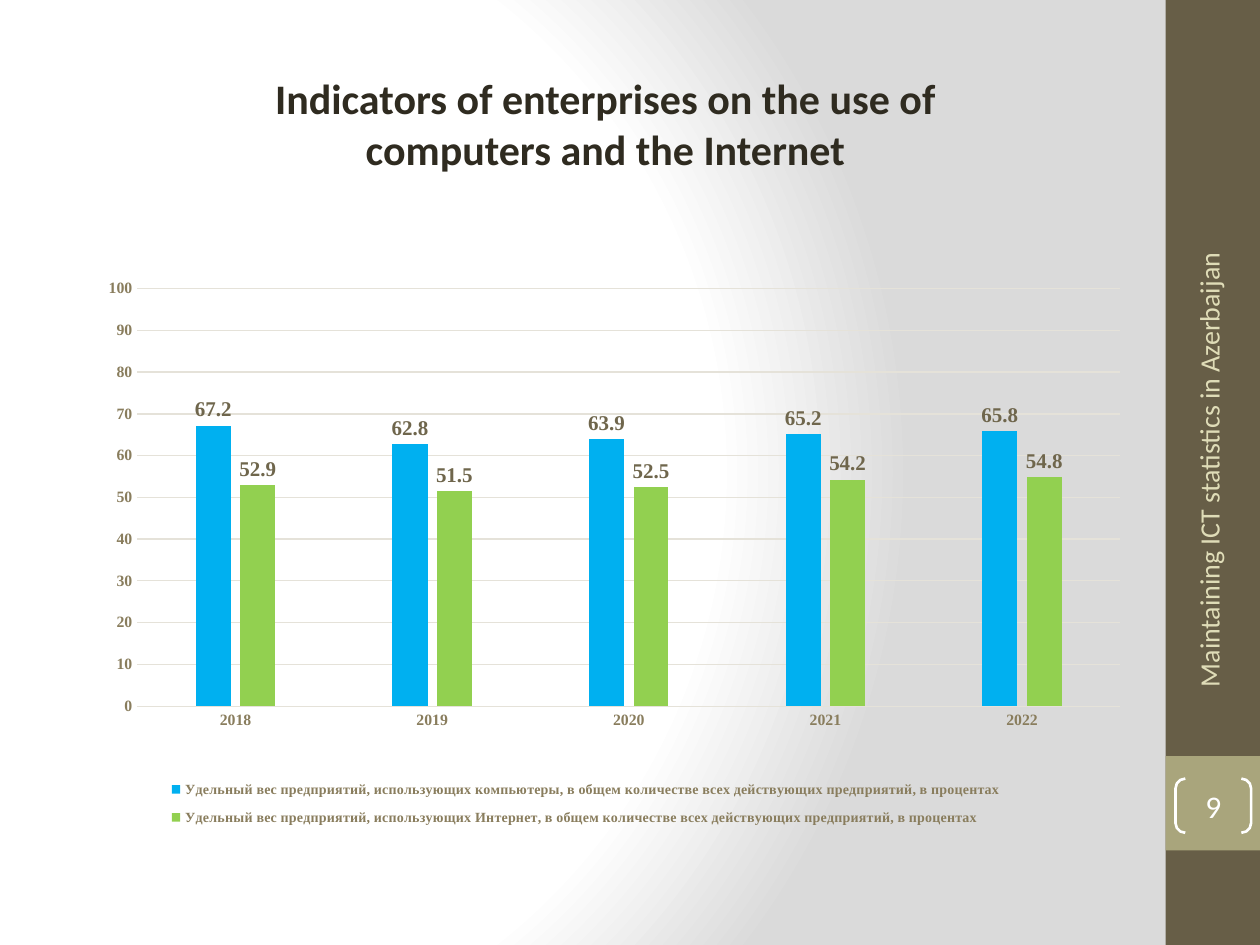
from dataclasses import dataclass

from pptx import Presentation, util as u
from pptx.chart import data as chart_data
from pptx.dml.color import RGBColor
from pptx.enum import chart as charts, shapes, text
from pptx.oxml import ns, parse_xml

SCALE = 9144
COLORS = {
    "white": "FFFFFF", "shade": "DADADA", "bar": "675E47", "badge": "A9A57C",
    "side": "DFDCB7", "dark": "2F2B20", "axis": "897D5D", "grid": "E5E2D9",
    "label": "6F664C", "computers": "00B0F0", "internet": "92D050",
}
STOPS = ((0, "white"), (75, "white"), (100, "shade"))
YEARS = ["2018", "2019", "2020", "2021", "2022"]
SHARE = "Удельный вес предприятий, использующих {}, в общем количестве всех действующих предприятий, в процентах"
SERIES = [
    ("computers", SHARE.format("компьютеры"), (67.2, 62.8, 63.9, 65.2, 65.8)),
    ("internet", SHARE.format("Интернет"), (52.9, 51.5, 52.5, 54.2, 54.8)),
]


def color(name):
    return RGBColor.from_string(COLORS[name])


def px(*lengths):
    return [u.Emu(length * SCALE) for length in lengths]


def place(parent, x, y, w, h, inner=False):
    target = '<c:layoutTarget val="inner"/>' if inner else ""
    modes = '<c:xMode val="edge"/><c:yMode val="edge"/>'
    sizes = "".join(f'<c:{key} val="{value}"/>' for key, value in zip("xywh", (x, y, w, h)))
    for old in parent.findall(ns.qn("c:layout")):
        parent.remove(old)
    layout = parse_xml(f'<c:layout {ns.nsdecls("c")}><c:manualLayout>{target}{modes}{sizes}'
                       "</c:manualLayout></c:layout>")
    parent.insert(0 if inner else 1, layout)


@dataclass
class Painter:
    page: object
    body_font: str = "Calibri"
    chart_font: str = "Times New Roman"

    def background(self):
        self.page.background.fill.solid()
        holder = self.page.element.find(".//" + ns.qn("p:bgPr"))
        stops = "".join(f'<a:gs pos="{at * 1000}"><a:srgbClr val="{COLORS[name]}"/></a:gs>'
                        for at, name in STOPS)
        holder.replace(holder[0], parse_xml(
            f'<a:gradFill {ns.nsdecls("a")} rotWithShape="1"><a:gsLst>{stops}</a:gsLst>'
            '<a:path path="circle"><a:fillToRect l="20000" t="50000" r="100000" b="50000"/>'
            "</a:path></a:gradFill>"))

    def style(self, font, size, name, bold=False, family=None):
        font.size, font.bold, font.name = u.Pt(size), bold, family or self.body_font
        font.color.rgb = color(name)

    def set_text(self, shape, words, size, name, bold=False):
        frame = shape.text_frame
        frame.text, frame.word_wrap = words, True
        for para in frame.paragraphs:
            para.alignment = text.PP_ALIGN.CENTER
            for span in para.runs:
                self.style(span.font, size, name, bold)
        return frame

    def rectangle(self, at, name):
        box = self.page.shapes.add_shape(shapes.MSO_SHAPE.RECTANGLE, *px(*at))
        box.shadow.inherit = False
        box.fill.solid()
        box.fill.fore_color.rgb = color(name)
        box.line.fill.background()

    def text_box(self, at, words, size, name, bold=False, rotation=0):
        box = self.page.shapes.add_textbox(*px(*at))
        box.rotation = rotation
        frame = self.set_text(box, words, size, name, bold)
        if rotation:
            frame.vertical_anchor = text.MSO_ANCHOR.MIDDLE

    def page_number(self, at, words):
        box = self.page.shapes.add_shape(shapes.MSO_SHAPE.DOUBLE_BRACKET, *px(*at))
        box.shadow.inherit = False
        box.adjustments[0] = 0.18
        box.fill.background()
        box.line.color.rgb = color("white")
        box.line.width = u.Pt(1.5)
        frame = self.set_text(box, words, 18, "white")
        frame.margin_left = frame.margin_right = frame.margin_top = frame.margin_bottom = 0
        frame.vertical_anchor = text.MSO_ANCHOR.MIDDLE

    def column_chart(self, at, categories, series):
        source = chart_data.CategoryChartData()
        source.categories = categories
        for _, title, values in series:
            source.add_series(title, values)
        chart = self.page.shapes.add_chart(
            charts.XL_CHART_TYPE.COLUMN_CLUSTERED, *px(*at), source).chart
        self.style(chart.font, 10, "dark", family=self.chart_font)
        chart.has_title = False

        plot = chart.plots[0]
        place(plot._element.getparent(), 0.05, 0.02, 0.93, 0.73, inner=True)
        plot.gap_width, plot.overlap, plot.vary_by_categories = 335, -27, False
        for (name, _, _), columns in zip(series, plot.series):
            columns.format.fill.solid()
            columns.format.fill.fore_color.rgb = color(name)
            labels = columns.data_labels
            labels.show_value = True
            labels.position = charts.XL_LABEL_POSITION.OUTSIDE_END
            self.style(labels.font, 12, "label", True, self.chart_font)

        values = chart.value_axis
        values.minimum_scale, values.maximum_scale, values.major_unit = 0, 100, 10
        values.has_major_gridlines = True
        values.format.line.fill.background()
        for axis in (chart.category_axis, values):
            axis.major_tick_mark = axis.minor_tick_mark = charts.XL_TICK_MARK.NONE
            self.style(axis.tick_labels.font, 9, "axis", True, self.chart_font)
        for line in (chart.category_axis.format.line, values.major_gridlines.format.line):
            line.color.rgb = color("grid")
            line.width = u.Pt(0.75)

        chart.has_legend = True
        chart.legend.position = charts.XL_LEGEND_POSITION.BOTTOM
        chart.legend.include_in_layout = False
        self.style(chart.legend.font, 8, "axis", True, self.chart_font)
        place(chart.legend._element, 0.05, 0.86, 0.85, 0.12)


def main():
    deck = Presentation()
    deck.slide_width, deck.slide_height = px(1000, 750)
    painter = Painter(deck.slides.add_slide(deck.slide_layouts[6]))
    painter.background()
    painter.rectangle((925, 0, 75, 750), "bar")
    painter.rectangle((925, 600, 75, 75), "badge")
    painter.text_box((740, 353, 438, 40), "Maintaining ICT statistics in Azerbaijan",
                     16, "side", rotation=270)
    painter.page_number((933, 618, 60, 43), "9")
    painter.column_chart((67, 220, 839, 454), YEARS, SERIES)
    painter.text_box((138, 53, 685, 91),
                     "Indicators of enterprises on the use of computers and the Internet",
                     24, "dark", bold=True)
    deck.save("out.pptx")


if __name__ == "__main__":
    main()
